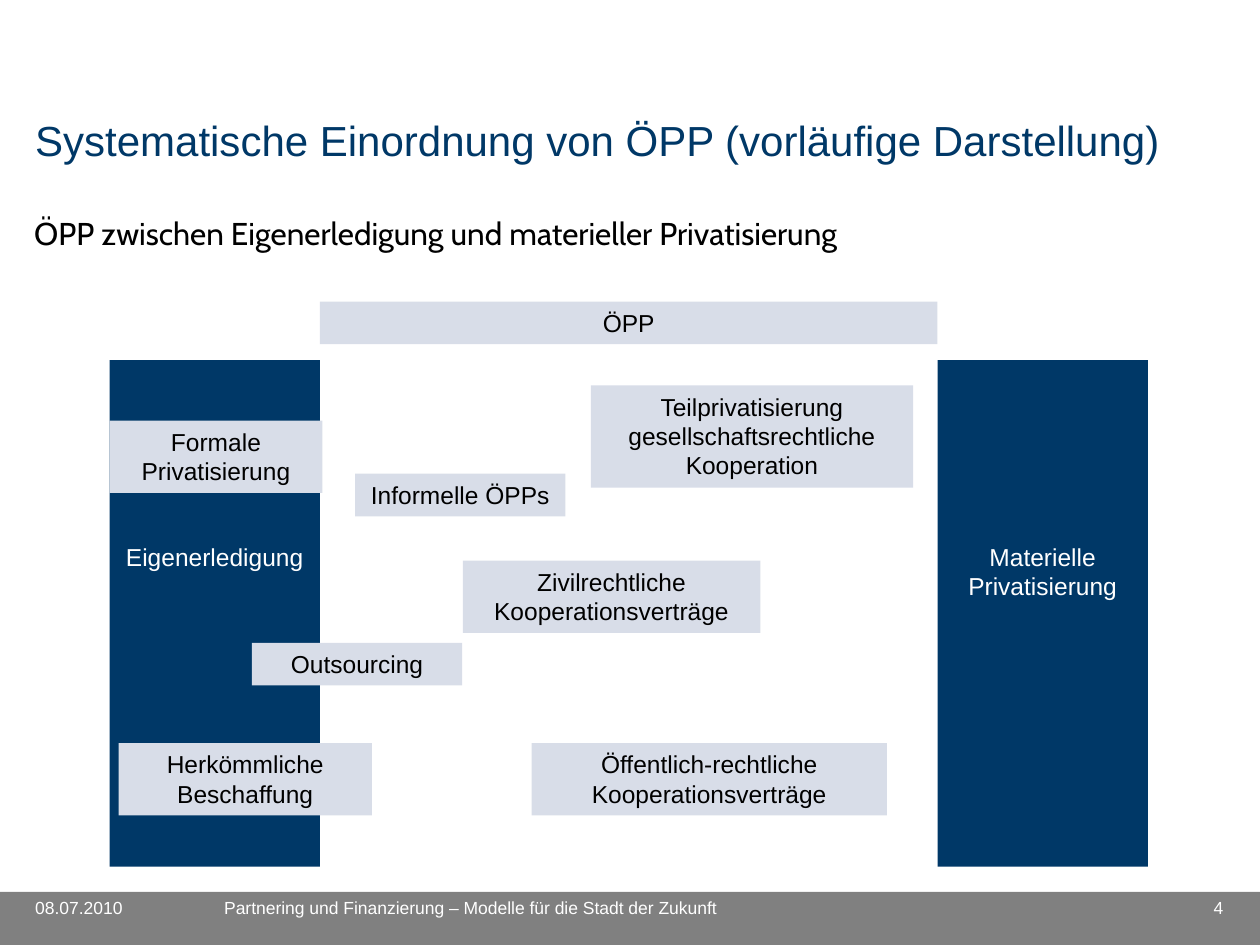
"""Build a slide that places ÖPP between in-house provision and privatisation."""
from dataclasses import dataclass

from pptx import Presentation
from pptx.dml.color import RGBColor
from pptx.enum.shapes import MSO_SHAPE
from pptx.enum.text import MSO_ANCHOR, PP_ALIGN
from pptx.util import Cm, Pt


@dataclass(frozen=True)
class Theme:
    navy: str = "003867"
    pale: str = "D8DDE8"
    grey: str = "808080"
    black: str = "000000"
    white: str = "FFFFFF"
    font: str = "Arial"
    subtitle_font: str = "Cabin"
    title_size: int = 24
    subtitle_size: int = 18
    label_size: int = 14
    footer_size: int = 10


class SlideBuilder:
    def __init__(self, page, theme):
        self.page = page
        self.theme = theme

    def set_text(self, shape, text, size, color, align, font=None):
        frame = shape.text_frame
        frame.word_wrap = True
        frame.vertical_anchor = MSO_ANCHOR.TOP
        frame.text = text
        para = frame.paragraphs[0]
        para.alignment = align
        for span in para.runs:
            span.font.size = Pt(size)
            span.font.name = font or self.theme.font
            span.font.color.rgb = RGBColor.from_string(color)
        return frame

    def text(self, left, top, width, height, text, size, color,
             align=PP_ALIGN.LEFT, font=None):
        box = self.page.shapes.add_textbox(Cm(left), Cm(top), Cm(width), Cm(height))
        frame = self.set_text(box, text, size, color, align, font)
        frame.margin_left = frame.margin_right = Cm(0)
        frame.margin_top = frame.margin_bottom = Cm(0)

    def block(self, left, top, width, height, fill):
        shape = self.page.shapes.add_shape(
            MSO_SHAPE.RECTANGLE, Cm(left), Cm(top), Cm(width), Cm(height))
        shape.shadow.inherit = False
        shape.fill.solid()
        shape.fill.fore_color.rgb = RGBColor.from_string(fill)
        shape.line.fill.background()
        return shape

    def column(self, left, text):
        shape = self.block(left, 7.26, COLUMN_WIDTH, 10.21, self.theme.navy)
        frame = self.set_text(shape, text, self.theme.label_size, self.theme.white,
                              PP_ALIGN.CENTER)
        frame.margin_top = Cm(3.66)

    def label(self, left, top, width, lines, text):
        height = 0.86 + 0.6 * (lines - 1)
        shape = self.block(left, top, width, height, self.theme.pale)
        self.set_text(shape, text, self.theme.label_size, self.theme.black,
                      PP_ALIGN.CENTER)

    def footer(self, left, width, text, align=PP_ALIGN.LEFT):
        self.text(left, 18.08, width, 0.84, text, self.theme.footer_size,
                  self.theme.white, align)


COLUMN_WIDTH = 4.24
COLUMNS = [(2.21, "Eigenerledigung"), (18.9, "Materielle Privatisierung")]
LABELS = [
    (2.21, 8.48, 4.29, 2, "Formale Privatisierung"),
    (2.39, 14.98, 5.11, 2, "Herkömmliche Beschaffung"),
    (5.08, 12.96, COLUMN_WIDTH, 1, "Outsourcing"),
    (7.16, 9.55, COLUMN_WIDTH, 1, "Informelle ÖPPs"),
    (9.33, 11.3, 6, 2, "Zivilrechtliche Kooperationsverträge"),
    (10.72, 14.98, 7.16, 2, "Öffentlich-rechtliche Kooperationsverträge"),
    (11.91, 7.77, 6.5, 3, "Teilprivatisierung gesellschaftsrechtliche Kooperation"),
    (6.45, 6.08, 12.45, 1, "ÖPP"),
]


def main():
    theme = Theme()
    deck = Presentation()
    deck.slide_width, deck.slide_height = Cm(25.4), Cm(19.05)
    builder = SlideBuilder(deck.slides.add_slide(deck.slide_layouts[6]), theme)

    builder.block(0, 17.98, 25.4, 1.07, theme.grey)
    builder.text(0.71, 2.31, 23.9, 2.69,
                 "Systematische Einordnung von ÖPP (vorläufige Darstellung)",
                 theme.title_size, theme.navy)
    builder.text(0.69, 4.32, 23.4, 1.12,
                 "ÖPP zwischen Eigenerledigung und materieller Privatisierung",
                 theme.subtitle_size, theme.black, font=theme.subtitle_font)
    for column in COLUMNS:
        builder.column(*column)
    for label in LABELS:
        builder.label(*label)
    builder.footer(0.71, 3.38, "08.07.2010")
    builder.footer(4.52, 17.7,
                   "Partnering und Finanzierung – Modelle für die Stadt der Zukunft")
    builder.footer(22.76, 1.9, "4", PP_ALIGN.RIGHT)
    deck.save("out.pptx")


if __name__ == "__main__":
    main()
